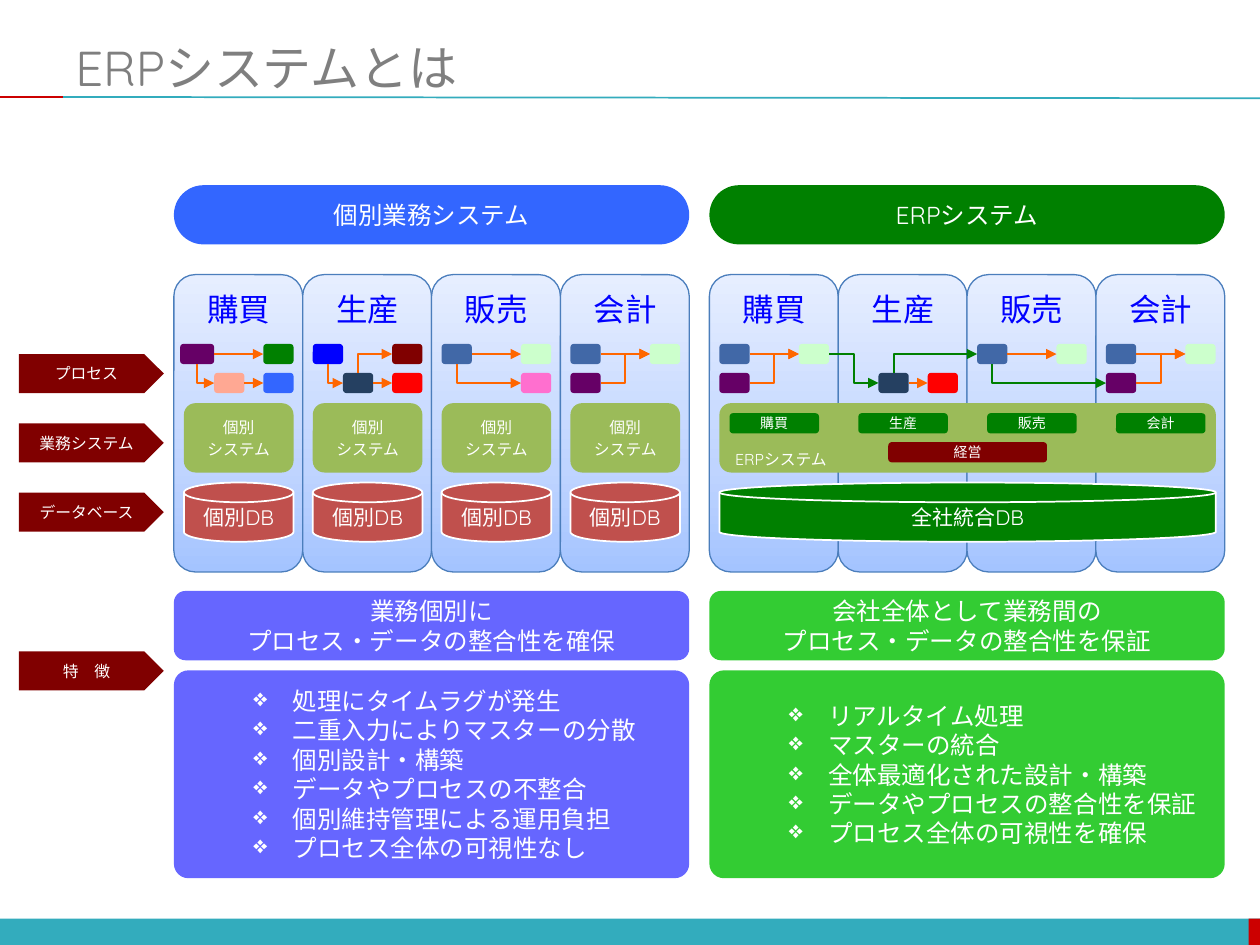
from copy import deepcopy
from typing import NamedTuple

from pptx import Presentation
from pptx.dml.color import RGBColor
from pptx.enum.shapes import MSO_CONNECTOR, MSO_SHAPE
from pptx.enum.text import MSO_ANCHOR, PP_ALIGN
from pptx.oxml.ns import qn
from pptx.oxml.xmlchemy import OxmlElement
from pptx.util import Inches, Pt

ORANGE, GREEN, MAROON, WHITE = "FF6600", "008000", "800000", "FFFFFF"
BLUE, PALE, PURPLE, NAVY, RED = "4168A7", "CCFFCC", "660066", "254061", "FF0000"
TEAL, OLIVE = "33ACBD", "9BBB59"
DEPARTMENTS = ["購買", "生産", "販売", "会計"]
PANEL_W = 4.09
PITCH = PANEL_W / len(DEPARTMENTS)
NEAR, MIDDLE, FAR = 0.08, 0.32, 0.71
STEP_H = 0.16
ROW_TOPS = [2.73, 2.96]


class Step(NamedTuple):
    col: int
    offset: float
    row: int
    color: str
    width: float = 0.24


class Link(NamedTuple):
    start: int
    end: int
    corner: bool = False
    color: str = ORANGE


class Panel(NamedTuple):
    left: float
    title: str
    title_color: str
    color: str
    summary: list[str]
    points: list[str]
    steps: list[Step]
    links: list[Link]


SEPARATE = Panel(
    1.38, "個別業務システム", "3366FF", "6666FF",
    ["業務個別に", "プロセス・データの整合性を確保"],
    ["処理にタイムラグが発生", "二重入力によりマスターの分散", "個別設計・構築",
     "データやプロセスの不整合", "個別維持管理による運用負担", "プロセス全体の可視性なし"],
    [Step(0, 0.05, 0, PURPLE, 0.27), Step(0, MIDDLE, 1, "FFA893"),
     Step(0, FAR, 1, "3366FF"), Step(0, FAR, 0, GREEN),
     Step(1, NEAR, 0, "0000FF"), Step(1, MIDDLE, 1, NAVY),
     Step(1, FAR, 1, RED), Step(1, FAR, 0, MAROON),
     Step(2, NEAR, 0, BLUE), Step(2, FAR, 1, "FF6FCF"), Step(2, FAR, 0, PALE),
     Step(3, NEAR, 0, BLUE), Step(3, FAR, 0, PALE), Step(3, NEAR, 1, PURPLE)],
    [Link(0, 3), Link(0, 1, True), Link(1, 2), Link(5, 7, True), Link(5, 6),
     Link(4, 5, True), Link(8, 9, True), Link(8, 10), Link(13, 12), Link(11, 12)])

INTEGRATED = Panel(
    5.63, "ERPシステム", GREEN, "33CC33",
    ["会社全体として業務間の", "プロセス・データの整合性を保証"],
    ["リアルタイム処理", "マスターの統合", "全体最適化された設計・構築",
     "データやプロセスの整合性を保証", "プロセス全体の可視性を確保"],
    [Step(0, NEAR, 0, BLUE), Step(0, FAR, 0, PALE), Step(0, NEAR, 1, PURPLE),
     Step(1, MIDDLE, 1, NAVY), Step(1, FAR, 1, RED),
     Step(2, NEAR, 0, BLUE), Step(2, FAR, 0, PALE),
     Step(3, NEAR, 0, BLUE), Step(3, FAR, 0, PALE), Step(3, NEAR, 1, PURPLE)],
    [Link(2, 1), Link(0, 1), Link(3, 5, True, GREEN), Link(3, 4),
     Link(1, 3, False, GREEN), Link(5, 9, True, GREEN), Link(5, 6),
     Link(9, 8), Link(7, 8)])


def rgb(value: str) -> RGBColor:
    return RGBColor.from_string(value)


def write(s, lines: list[str], size: float, color: str = WHITE, align=PP_ALIGN.CENTER,
          gap: float = 0, bullet: str = "") -> None:
    tf = s.text_frame
    tf.word_wrap = True
    tf.vertical_anchor = MSO_ANCHOR.MIDDLE
    for i, line in enumerate(lines):
        p = tf.add_paragraph() if i else tf.paragraphs[0]
        p.alignment = align
        if i and gap:
            p.space_before = Pt(gap)
        if bullet:
            p.level = 1
            pPr = p._p.get_or_add_pPr()
            pPr.set("marL", str(Inches(0.81)))
            pPr.set("indent", str(Inches(-0.31)))
            mark = OxmlElement("a:buChar")
            mark.set("char", bullet)
            pPr.append(mark)
        r = p.add_run()
        r.text = line
        r.font.color.rgb = rgb(color)
        for name, value in {"name": "Quicksand", "size": Pt(size)}.items():
            setattr(r.font, name, value)


def add_box(shapes, x: float, y: float, w: float, h: float, color: str,
            kind=MSO_SHAPE.ROUNDED_RECTANGLE, line: str = "", weight: float = 1, adj=None):
    s = shapes.add_shape(kind, Inches(x), Inches(y), Inches(w), Inches(h))
    s.shadow.inherit = False
    s.fill.solid()
    s.fill.fore_color.rgb = rgb(color)
    if line:
        s.line.color.rgb = rgb(line)
        s.line.width = Pt(weight)
    else:
        s.line.fill.background()
    if adj is not None:
        s.adjustments[0] = adj
    return s


def add_label(shapes, x: float, y: float, w: float, h: float, text: str,
              size: float, color: str, align=PP_ALIGN.CENTER) -> None:
    s = shapes.add_textbox(Inches(x), Inches(y), Inches(w), Inches(h))
    write(s, [text], size, color, align)


def add_line(shapes, x1: float, y1: float, x2: float, y2: float, color: str,
             kind=MSO_CONNECTOR.STRAIGHT, arrow: bool = False):
    c = shapes.add_connector(kind, Inches(x1), Inches(y1), Inches(x2), Inches(y2))
    c.line.color.rgb = rgb(color)
    c.line.width = Pt(1)
    if arrow:
        tail = OxmlElement("a:tailEnd")
        tail.set("type", "triangle")
        c.line._get_or_add_ln().append(tail)
    c._element.spPr.append(OxmlElement("a:effectLst"))
    return c


def add_corner(shapes, x1: float, y1: float, x2: float, y2: float, color: str) -> None:
    cx, cy = (x1 + x2) / 2, (y1 + y2) / 2
    half_w, half_h = abs(y2 - y1) / 2, (x2 - x1) / 2
    down = y2 > y1
    rise = half_h if down else -half_h
    c = add_line(shapes, cx + half_w, cy - rise, cx - half_w, cy + rise,
                 color, MSO_CONNECTOR.ELBOW, True)
    spPr = c._element.spPr
    spPr.find(qn("a:prstGeom")).set("prst", "bentConnector2")
    spPr.find(qn("a:xfrm")).set("rot", str((270 if down else 90) * 60000))


def add_column(shapes, x: float, name: str) -> None:
    s = add_box(shapes, x, 2.18, PITCH, 2.36, WHITE, line="4B7EBC", weight=0.75)
    s.fill.gradient()
    s.fill.gradient_angle = 90
    stops = s._element.spPr.find(".//" + qn("a:gsLst"))
    stops.append(deepcopy(stops[-1]))
    shades = [(0, "A4C4FF"), (0.35, "BFD4FF"), (1, "E6EEFF")]
    for stop, (position, color) in zip(s.fill.gradient_stops, shades):
        stop.position = position
        stop.color.rgb = rgb(color)
    add_label(shapes, x + 0.16, 2.25, 0.71, 0.4, name, 18, "0000FF")


def add_flow(shapes, panel: Panel) -> None:
    def left(step: Step) -> float:
        return panel.left + step.col * PITCH + step.offset

    for step in panel.steps:
        add_box(shapes, left(step), ROW_TOPS[step.row], step.width, STEP_H, step.color)
    for link in panel.links:
        a, b = panel.steps[link.start], panel.steps[link.end]
        y1, y2 = (ROW_TOPS[step.row] + STEP_H / 2 for step in (a, b))
        if link.corner:
            edge = y1 + (STEP_H / 2 if y2 > y1 else -STEP_H / 2)
            add_corner(shapes, left(a) + a.width / 2, edge, left(b), y2, link.color)
        else:
            kind = MSO_CONNECTOR.STRAIGHT if a.row == b.row else MSO_CONNECTOR.ELBOW
            add_line(shapes, left(a) + a.width, y1, left(b), y2, link.color, kind, True)


def add_database(shapes, x: float, w: float, color: str, text: str) -> None:
    disk = MSO_SHAPE.FLOWCHART_MAGNETIC_DISK
    write(add_box(shapes, x, 3.83, w, 0.47, color, disk, WHITE), [text], 12)


def add_panel(shapes, panel: Panel) -> None:
    x = panel.left
    write(add_box(shapes, x, 1.47, PANEL_W, 0.47, panel.title_color, adj=0.5), [panel.title], 14)
    for i, name in enumerate(DEPARTMENTS):
        add_column(shapes, x + i * PITCH, name)
    add_flow(shapes, panel)
    write(add_box(shapes, x, 4.69, PANEL_W, 0.55, panel.color), panel.summary, 14)
    write(add_box(shapes, x, 5.32, PANEL_W, 1.65, panel.color, adj=0.07),
          panel.points, 14, align=PP_ALIGN.LEFT, bullet="❖")


def add_separate_systems(shapes, x: float) -> None:
    for i in range(len(DEPARTMENTS)):
        left = x + i * PITCH + NEAR
        write(add_box(shapes, left, 3.2, 0.87, 0.55, OLIVE), ["個別", "システム"], 9, gap=1.8)
        add_database(shapes, left, 0.87, "C0504D", "個別DB")


def add_integrated_system(shapes, x: float) -> None:
    s = add_box(shapes, x + NEAR, 3.2, 3.94, 0.55, OLIVE)
    write(s, ["ERPシステム"], 9, align=PP_ALIGN.LEFT)
    s.text_frame.vertical_anchor = MSO_ANCHOR.BOTTOM
    s.text_frame.margin_bottom = 0
    for i, name in enumerate(DEPARTMENTS):
        write(add_box(shapes, x + i * PITCH + 0.16, 3.28, 0.71, 0.16, GREEN), [name], 8)
    write(add_box(shapes, x + 1.42, 3.51, 1.26, 0.16, MAROON), ["経営"], 8)
    add_database(shapes, x + NEAR, 3.94, GREEN, "全社統合DB")


def main() -> None:
    prs = Presentation()
    prs.slide_width, prs.slide_height = Inches(10), Inches(7.5)
    shapes = prs.slides.add_slide(prs.slide_layouts[6]).shapes
    add_box(shapes, 0, 7.29, 10, 0.22, TEAL, MSO_SHAPE.RECTANGLE)
    add_box(shapes, 9.91, 7.29, 0.1, 0.22, "CC0000", MSO_SHAPE.RECTANGLE)
    add_line(shapes, 0.5, 0.77, 10, 0.78, TEAL)
    add_line(shapes, 0, 0.77, 0.5, 0.77, "CC0000")
    add_label(shapes, 0.5, 0.3, 9.5, 0.46, "ERPシステムとは", 28, "7F7F7F", PP_ALIGN.LEFT)
    for panel in (SEPARATE, INTEGRATED):
        add_panel(shapes, panel)
    add_separate_systems(shapes, SEPARATE.left)
    add_integrated_system(shapes, INTEGRATED.left)
    tags = {"プロセス": 2.81, "業務システム": 3.36, "データベース": 3.91, "特　徴": 5.17}
    for text, y in tags.items():
        write(add_box(shapes, 0.15, y, 1.15, 0.31, MAROON, MSO_SHAPE.PENTAGON), [text], 9)
    prs.save("out.pptx")


if __name__ == "__main__":
    main()
